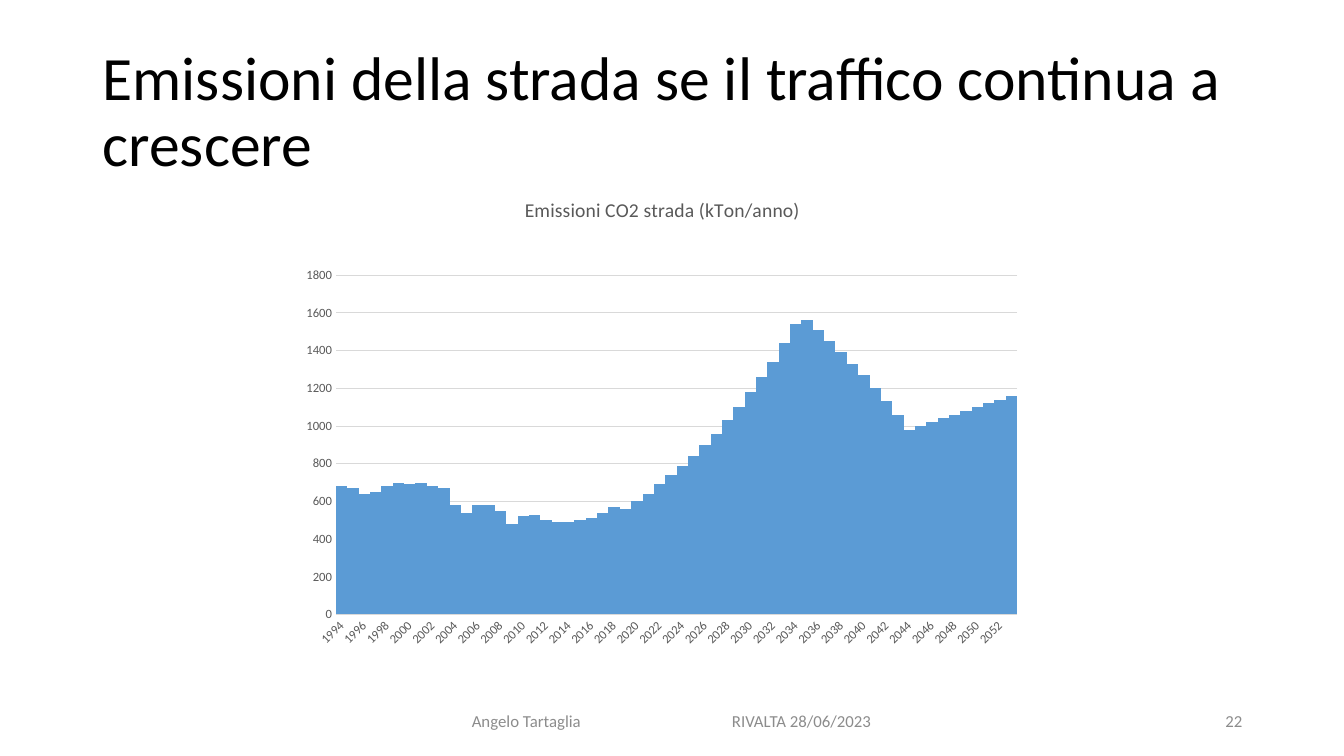
from lxml import etree
from pptx import Presentation
from pptx.chart.data import CategoryChartData
from pptx.dml.color import RGBColor
from pptx.enum.chart import XL_CHART_TYPE, XL_TICK_MARK
from pptx.enum.text import MSO_ANCHOR, PP_ALIGN
from pptx.oxml import parse_xml
from pptx.oxml.ns import nsdecls, qn
from pptx.util import Inches, Pt

COLUMNS = XL_CHART_TYPE.COLUMN_CLUSTERED
NO_TICK = XL_TICK_MARK.NONE
MIDDLE = MSO_ANCHOR.MIDDLE
LEFT, RIGHT = PP_ALIGN.LEFT, PP_ALIGN.RIGHT

# Content
FONT = "Calibri"
COLORS = {"title": "000000", "footer": "8C8C8C", "label": "595959",
          "grid": "D9D9D9", "bar": "5B9BD5"}
TEXTS = [
    {"text": "Emissioni della strada se il traffico continua a crescere",
     "box": (0.92, 0.4, 11.5, 1.45), "size": 44, "color": "title",
     "align": LEFT, "spacing": 0.9, "inset": 0.1},
    {"text": "Angelo Tartaglia\tRIVALTA 28/06/2023",
     "box": (4.42, 6.95, 4.5, 0.4), "size": 12, "color": "footer",
     "align": LEFT, "spacing": 1.0, "inset": 0.26, "tab": 2.58},
    {"text": "22", "box": (9.42, 6.95, 3, 0.4), "size": 12, "color": "footer",
     "align": RIGHT, "spacing": 1.0, "inset": 0.1},
]
CHART_TITLE = "Emissioni CO2 strada (kTon/anno)"
CHART_BOX = (2.66, 1.76, 7.82, 4.98)
PLOT = {"x": 0.086, "y": 0.195, "w": 0.864, "h": 0.676}
FIRST_YEAR = 1994
EMISSIONS = [
    680, 670, 640, 650, 680, 700, 690, 700, 680, 670,
    580, 540, 580, 580, 550, 480, 520, 530, 500, 490,
    490, 500, 510, 540, 570, 560, 600, 640, 690, 740,
    790, 840, 900, 960, 1030, 1100, 1180, 1260, 1340, 1440,
    1540, 1560, 1510, 1450, 1390, 1330, 1270, 1200, 1130, 1060,
    980, 1000, 1020, 1040, 1060, 1080, 1100, 1120, 1140, 1160,
]


def rgb(name):
    return RGBColor.from_string(COLORS[name])


def set_font(font, size, color):
    for name, value in {"name": FONT, "size": Pt(size), "bold": False}.items():
        setattr(font, name, value)
    font.color.rgb = rgb(color)


def set_line(line, color):
    line.color.rgb = rgb(color)
    line.width = Pt(0.75)


def add_text(slide, item):
    shape = slide.shapes.add_textbox(*map(Inches, item["box"]))
    frame = shape.text_frame
    settings = {"word_wrap": True, "vertical_anchor": MIDDLE,
                "margin_left": Inches(item["inset"])}
    for name, value in settings.items():
        setattr(frame, name, value)
    paragraph = frame.paragraphs[0]
    paragraph.alignment = item["align"]
    paragraph.line_spacing = item["spacing"]
    run = paragraph.add_run()
    run.text = item["text"]
    set_font(run.font, item["size"], item["color"])
    if "tab" in item:
        properties = paragraph._p.get_or_add_pPr()
        tabs = etree.SubElement(properties, qn("a:tabLst"))
        etree.SubElement(tabs, qn("a:tab"), pos=str(Inches(item["tab"])), algn="l")


def add_emissions_chart(slide):
    data = CategoryChartData()
    data.categories = [str(FIRST_YEAR + i) for i in range(len(EMISSIONS))]
    data.add_series(CHART_TITLE, EMISSIONS)
    chart = slide.shapes.add_chart(COLUMNS, *map(Inches, CHART_BOX), data).chart
    set_font(chart.font, 10, "title")
    chart.has_legend = False

    # Chart title
    chart.has_title = True
    chart.chart_title.include_in_layout = False
    paragraph = chart.chart_title.text_frame.paragraphs[0]
    run = paragraph.add_run()
    run.text = CHART_TITLE
    set_font(run.font, 14, "label")

    # Touching columns
    plot = chart.plots[0]
    plot.gap_width = 0
    plot.vary_by_categories = False
    series = plot.series[0]
    series.invert_if_negative = False
    series.format.fill.solid()
    series.format.fill.fore_color.rgb = rgb("bar")

    # Axes
    years, values = chart.category_axis, chart.value_axis
    for axis in (years, values):
        axis.major_tick_mark = axis.minor_tick_mark = NO_TICK
        set_font(axis.tick_labels.font, 9, "label")
    set_line(years.format.line, "grid")
    years._element.find(qn("c:txPr")).find(qn("a:bodyPr")).set("rot", "-2700000")
    skip = parse_xml(f'<c:tickLblSkip {nsdecls("c")} val="2"/>')
    years._element.find(qn("c:noMultiLvlLbl")).addprevious(skip)
    scale = {"minimum_scale": 0, "maximum_scale": 1800, "major_unit": 200,
             "has_major_gridlines": True}
    for name, value in scale.items():
        setattr(values, name, value)
    values.format.line.fill.background()
    set_line(values.major_gridlines.format.line, "grid")

    # Plot area position
    plot_area = chart._chartSpace.chart.plotArea
    for old in plot_area.findall(qn("c:layout")):
        plot_area.remove(old)
    modes = '<c:layoutTarget val="inner"/><c:xMode val="edge"/><c:yMode val="edge"/>'
    sizes = "".join(f'<c:{key} val="{value}"/>' for key, value in PLOT.items())
    plot_area.insert(0, parse_xml(
        f'<c:layout {nsdecls("c")}><c:manualLayout>{modes}{sizes}'
        '</c:manualLayout></c:layout>'))


def main():
    presentation = Presentation()
    presentation.slide_width = Inches(13.33)
    presentation.slide_height = Inches(7.5)
    slide = presentation.slides.add_slide(presentation.slide_layouts[6])
    add_emissions_chart(slide)
    for item in TEXTS:
        add_text(slide, item)
    presentation.save("out.pptx")


if __name__ == "__main__":
    main()
